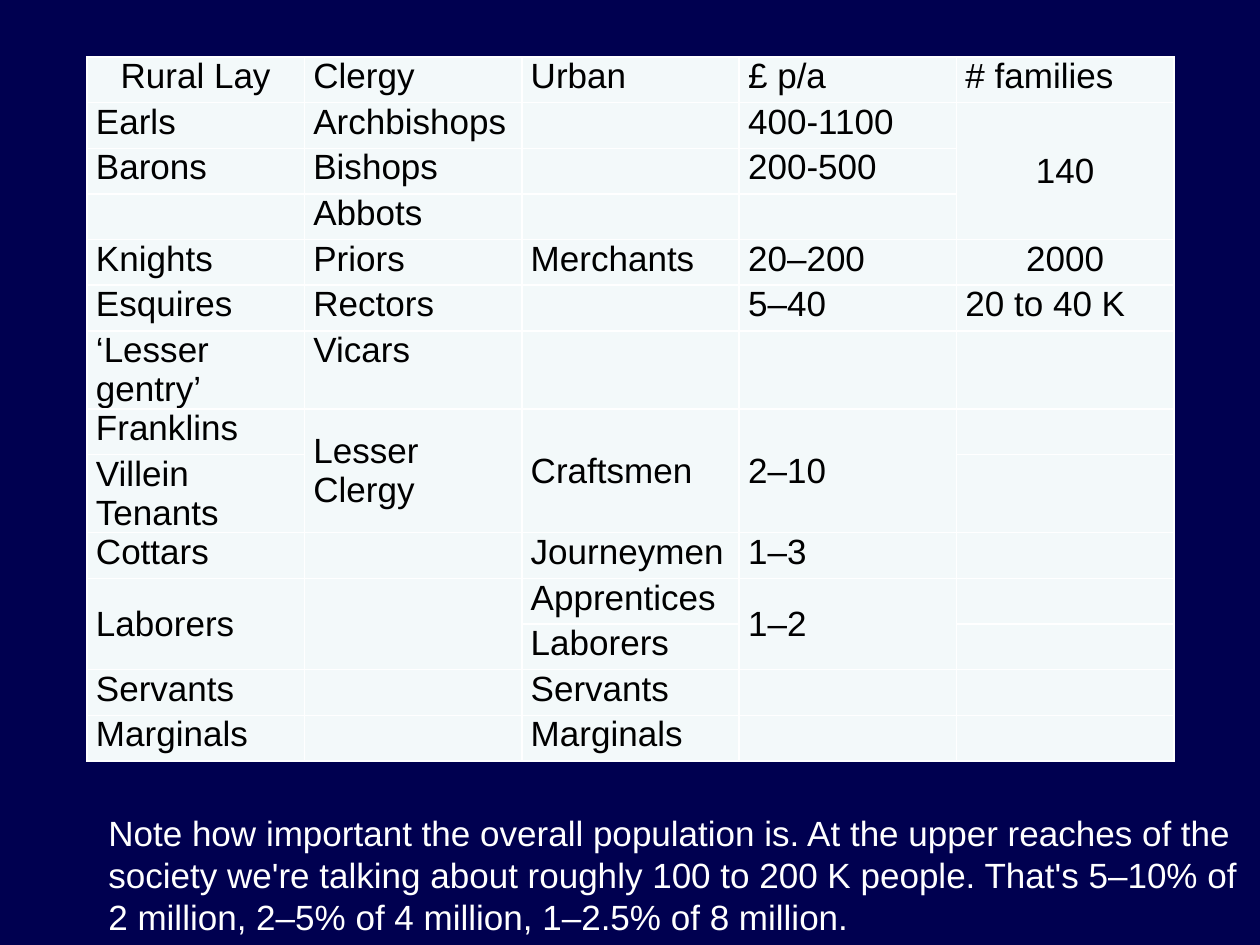
from lxml import etree
from pptx import Presentation
from pptx.dml.color import RGBColor
from pptx.enum.text import MSO_ANCHOR, PP_ALIGN
from pptx.oxml.ns import qn
from pptx.util import Pt

MIDDLE = MSO_ANCHOR.MIDDLE
CENTER = PP_ALIGN.CENTER
PX = 914400 // 126

NAVY, PALE, WHITE, BLACK = "000050", "F3F9FA", "FFFFFF", "000000"

RANKS = [
    ("Rural Lay", "Clergy", "Urban", "£ p/a", "# families"),
    ("Earls", "Archbishops", "", "400-1100", "140"),
    ("Barons", "Bishops", "", "200-500", ""),
    ("", "Abbots", "", "", ""),
    ("Knights", "Priors", "Merchants", "20–200", "2000"),
    ("Esquires", "Rectors", "", "5–40", "20 to 40 K"),
    ("‘Lesser gentry’", "Vicars", "", "", ""),
    ("Franklins", "Lesser Clergy", "Craftsmen", "2–10", ""),
    ("Villein Tenants", "", "", "", ""),
    ("Cottars", "", "Journeymen", "1–3", ""),
    ("Laborers", "", "Apprentices", "1–2", ""),
    ("", "", "Laborers", "", ""),
    ("Servants", "", "Servants", "", ""),
    ("Marginals", "", "Marginals", "", ""),
]
# (row, column): rows covered
SPANS = {(1, 4): 3, (7, 1): 2, (7, 2): 2, (7, 3): 2,
         (10, 0): 2, (10, 1): 2, (10, 3): 2}
CENTERED = {(0, 0), (1, 4), (4, 4)}
NOTE = ("Note how important the overall population is. At the upper reaches "
        "of the society we're talking about roughly 100 to 200 K people. "
        "That's 5–10% of 2 million, 2–5% of 4 million, 1–2.5% of 8 million.")


def px(*vals):
    return [v * PX for v in vals]


def color(code):
    return RGBColor.from_string(code)


def write(para, text, code):
    run = para.add_run()
    run.text = text
    run.font.name = "Arial"
    run.font.size = Pt(20)
    run.font.color.rgb = color(code)


def edge(cell):
    """Draw a thin white line on all four sides of a cell."""
    props = cell._tc.get_or_add_tcPr()
    for side in ("lnL", "lnR", "lnT", "lnB"):
        line = etree.SubElement(props, qn("a:" + side), w=str(Pt(1)))
        fill = etree.SubElement(line, qn("a:solidFill"))
        etree.SubElement(fill, qn("a:srgbClr"), val=WHITE)


def add_ranks(slide):
    rows, cols = len(RANKS), len(RANKS[0])
    table = slide.shapes.add_table(rows, cols, *px(87, 57, 1087, 639)).table
    table.first_row = table.horz_banding = False
    for r, rank in enumerate(RANKS):
        for c, text in enumerate(rank):
            cell = table.cell(r, c)
            edge(cell)
            cell.fill.solid()
            cell.fill.fore_color.rgb = color(PALE)
            cell.margin_left = cell.margin_right = 9 * PX
            cell.margin_top = cell.margin_bottom = 0
            if (r, c) in SPANS:
                cell.merge(table.cell(r + SPANS[r, c] - 1, c))
                cell.vertical_anchor = MIDDLE
            if text:
                para = cell.text_frame.paragraphs[0]
                para.space_after = Pt(5)
                if (r, c) in CENTERED:
                    para.alignment = CENTER
                write(para, text, BLACK)


def add_note(slide):
    frame = slide.shapes.add_textbox(*px(96, 805, 1173, 140)).text_frame
    frame.word_wrap = True
    write(frame.paragraphs[0], NOTE, WHITE)


def main():
    deck = Presentation()
    deck.slide_width, deck.slide_height = px(1260, 945)
    slide = deck.slides.add_slide(deck.slide_layouts[6])
    back = slide.background.fill
    back.solid()
    back.fore_color.rgb = color(NAVY)
    add_ranks(slide)
    add_note(slide)
    deck.save("out.pptx")


if __name__ == "__main__":
    main()
